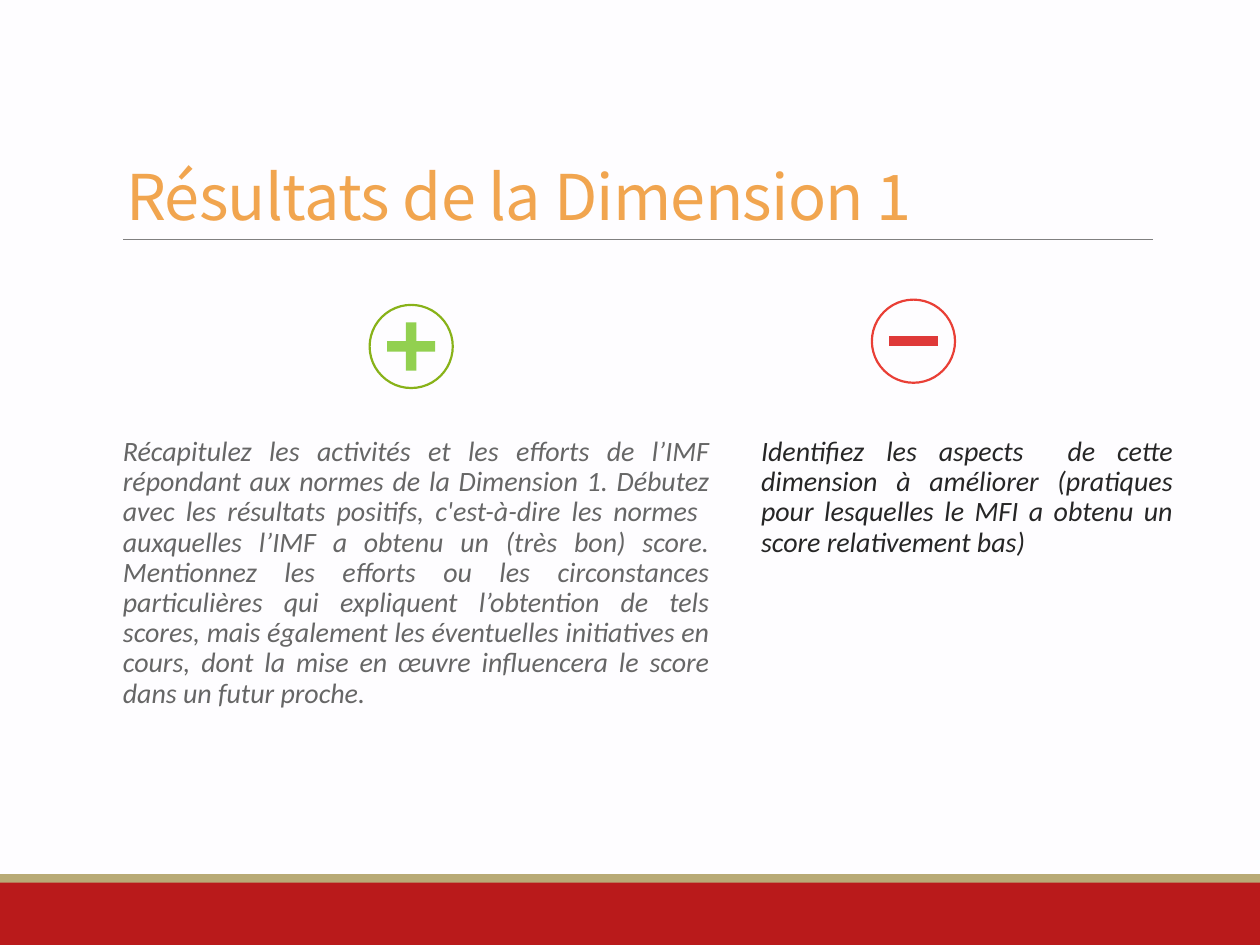
from dataclasses import dataclass

from lxml import etree
from pptx import Presentation
from pptx.dml.color import RGBColor
from pptx.enum.shapes import MSO_CONNECTOR, MSO_SHAPE
from pptx.enum.text import MSO_ANCHOR, MSO_AUTO_SIZE, PP_ALIGN
from pptx.oxml.ns import qn
from pptx.util import Pt

RECT, OVAL, PLUS = MSO_SHAPE.RECTANGLE, MSO_SHAPE.OVAL, MSO_SHAPE.CROSS
BAR = MSO_SHAPE.FLOWCHART_PROCESS
LINE = MSO_CONNECTOR.STRAIGHT
LEFT, EVEN = PP_ALIGN.LEFT, PP_ALIGN.JUSTIFY
TOP, BOTTOM = MSO_ANCHOR.TOP, MSO_ANCHOR.BOTTOM
FIXED = MSO_AUTO_SIZE.NONE

WIDE, HIGH = 720, 540
RING = 47.5  # diameter of the sign circles


@dataclass(frozen=True)
class Theme:
    back: str = "FEFDFF"
    band: str = "B91A1B"
    stripe: str = "B8AA76"
    rule: str = "808080"
    title: str = "F1A54F"
    gray: str = "666666"
    dark: str = "262626"
    leaf: str = "38732E"
    plus: str = "92D050"
    plus_ring: str = "88B219"
    minus: str = "DF3939"
    minus_ring: str = "E93F36"
    head_font: str = "Noto Sans CJK KR"
    text_font: str = "Calibri"
    head_size: int = 36
    text_size: int = 16


def apply(item, values):
    for key, value in values.items():
        setattr(item, key, value)


def tint(code):
    return RGBColor.from_string(code)


class Deck:
    def __init__(self, theme):
        self.theme = theme
        self.file = Presentation()
        apply(self.file, {"slide_width": Pt(WIDE), "slide_height": Pt(HIGH)})
        self.slide = self.file.slides.add_slide(self.file.slide_layouts[3])
        fill = self.slide.background.fill
        fill.solid()
        fill.fore_color.rgb = tint(theme.back)

    def shape(self, kind, box, fill=None, edge=None, home=None):
        home = home or self.slide.shapes
        item = home.add_shape(kind, *map(Pt, box))
        item.shadow.inherit = False
        if fill:
            item.fill.solid()
            item.fill.fore_color.rgb = tint(fill)
        else:
            item.fill.background()
        if edge:
            item.line.color.rgb = tint(edge)
            item.line.width = Pt(1.25)
        else:
            item.line.fill.background()
        return item

    def rule(self, start, end, color):
        item = self.slide.shapes.add_connector(LINE, *map(Pt, start + end))
        item.line.color.rgb = tint(color)
        item.line.width = Pt(0.5)
        etree.SubElement(item._element.spPr, qn("a:effectLst"))

    def sign(self, kind, mid, size, fill, edge):
        """A filled sign inside a ring, grouped around one centre."""
        home = self.slide.shapes.add_group_shape().shapes

        def around(wide, high):
            return mid[0] - wide / 2, mid[1] - high / 2, wide, high

        mark = self.shape(kind, around(*size), fill, home=home)
        self.shape(OVAL, around(RING, RING), edge=edge, home=home)
        return mark

    def place(self, slot, box, text, frame):
        """Move a placeholder, fill it and return its paragraph."""
        item = self.slide.placeholders[slot]
        keys = ("left", "top", "width", "height")
        apply(item, dict(zip(keys, map(Pt, box))))
        apply(item.text_frame, {"word_wrap": True, "auto_size": FIXED, **frame})
        para = item.text_frame.paragraphs[0]
        para.add_run().text = text
        return para

    def style(self, para, form, font, color):
        apply(para, {"space_before": Pt(0), **form})
        run = para.runs[0]
        apply(run.font, font)
        run.font.color.rgb = tint(color)
        return run

    def title(self, box, text):
        para = self.place(0, box, text, {"vertical_anchor": BOTTOM})
        form = {"alignment": LEFT, "line_spacing": 0.85}
        font = {"name": self.theme.head_font, "size": Pt(self.theme.head_size)}
        run = self.style(para, form, font, self.theme.title)
        run._r.get_or_add_rPr().set("spc", "-40")

    def note(self, slot, box, text, color, dot, indent, after):
        frame = {"vertical_anchor": TOP, "margin_left": 0, "margin_right": 0}
        para = self.place(slot, box, text, frame)
        # Hanging indent with a blank bullet
        props = para._p.get_or_add_pPr()
        props.set("marL", str(Pt(indent)))
        props.set("indent", str(-Pt(indent)))
        paint = etree.SubElement(props, qn("a:buClr"))
        etree.SubElement(paint, qn("a:srgbClr"), val=dot)
        etree.SubElement(props, qn("a:buChar"), char=" ")
        form = {"alignment": EVEN, "line_spacing": 0.9, "space_after": Pt(after)}
        font = {"name": self.theme.text_font, "size": Pt(self.theme.text_size),
                "italic": True}
        self.style(para, form, font, color)


def main():
    look = Theme()
    deck = Deck(look)

    # Footer bands and title rule
    deck.shape(RECT, (0, 504, WIDE, 36), look.band)
    deck.shape(RECT, (0, 499.5, WIDE, 5), look.stripe)
    deck.rule((70.5, 136.8), (659, 136.8), look.rule)

    # Title
    deck.title((65, 22.3, 594, 114.5), "Résultats de la Dimension 1")

    # Strengths and weaknesses
    deck.note(1, (65, 246.3, 340.5, 255.5),
              "Récapitulez les activités et les efforts de l’IMF répondant aux "
              "normes de la Dimension 1. Débutez avec les résultats positifs, "
              "c'est-à-dire les normes  auxquelles l’IMF a obtenu un (très bon) "
              "score. Mentionnez les efforts ou les circonstances particulières "
              "qui expliquent l’obtention de tels scores, mais également les "
              "éventuelles initiatives en cours, dont la mise en œuvre "
              "influencera le score dans un futur proche.",
              look.gray, look.band, 5.25, 1.5)
    deck.note(2, (427.7, 246.3, 242.6, 255.5),
              "Identifiez les aspects  de cette dimension à améliorer (pratiques "
              "pour lesquelles le MFI a obtenu un score relativement bas)",
              look.dark, look.leaf, 7.2, 2)

    # Minus and plus signs
    deck.sign(BAR, (522, 195), (28.3, 5.7), look.minus, look.minus_ring)
    plus = deck.sign(PLUS, (235, 198), (27.5, 27.5), look.plus, look.plus_ring)
    plus.adjustments[0] = 0.39

    deck.file.save("out.pptx")


if __name__ == "__main__":
    main()
